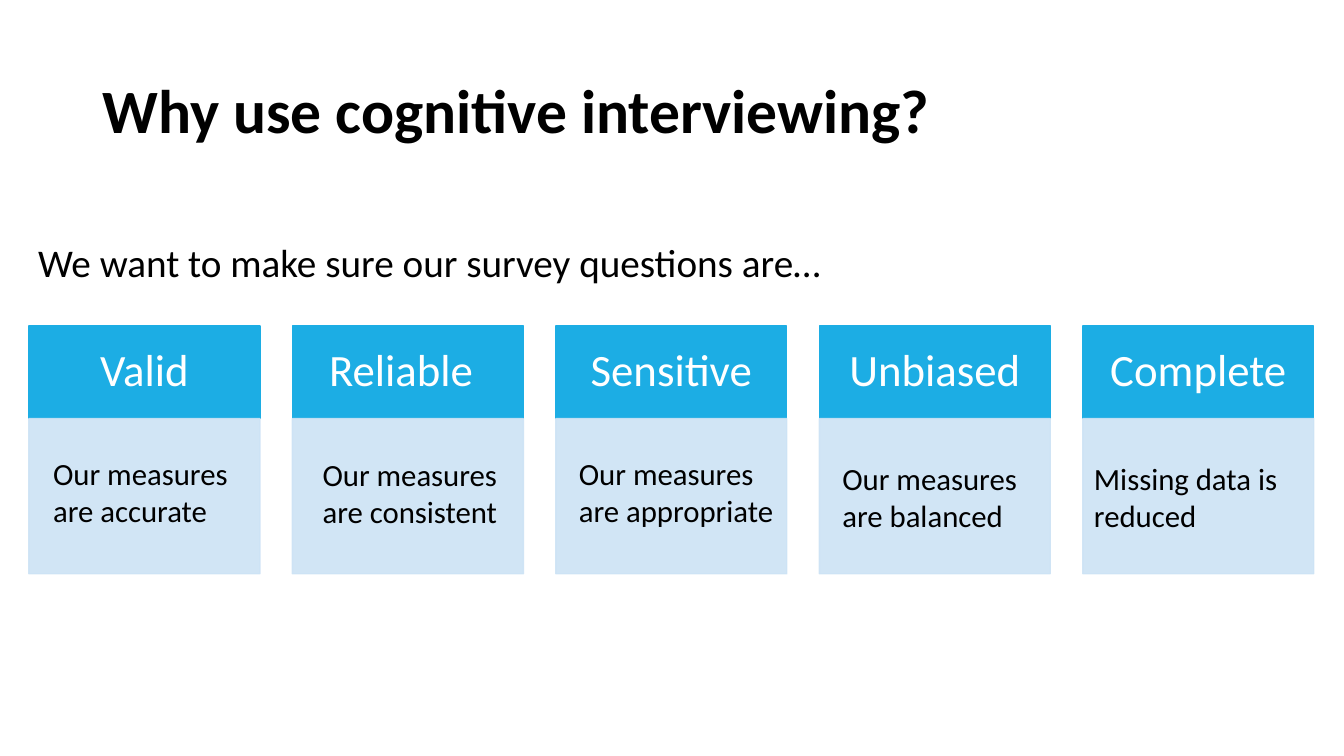
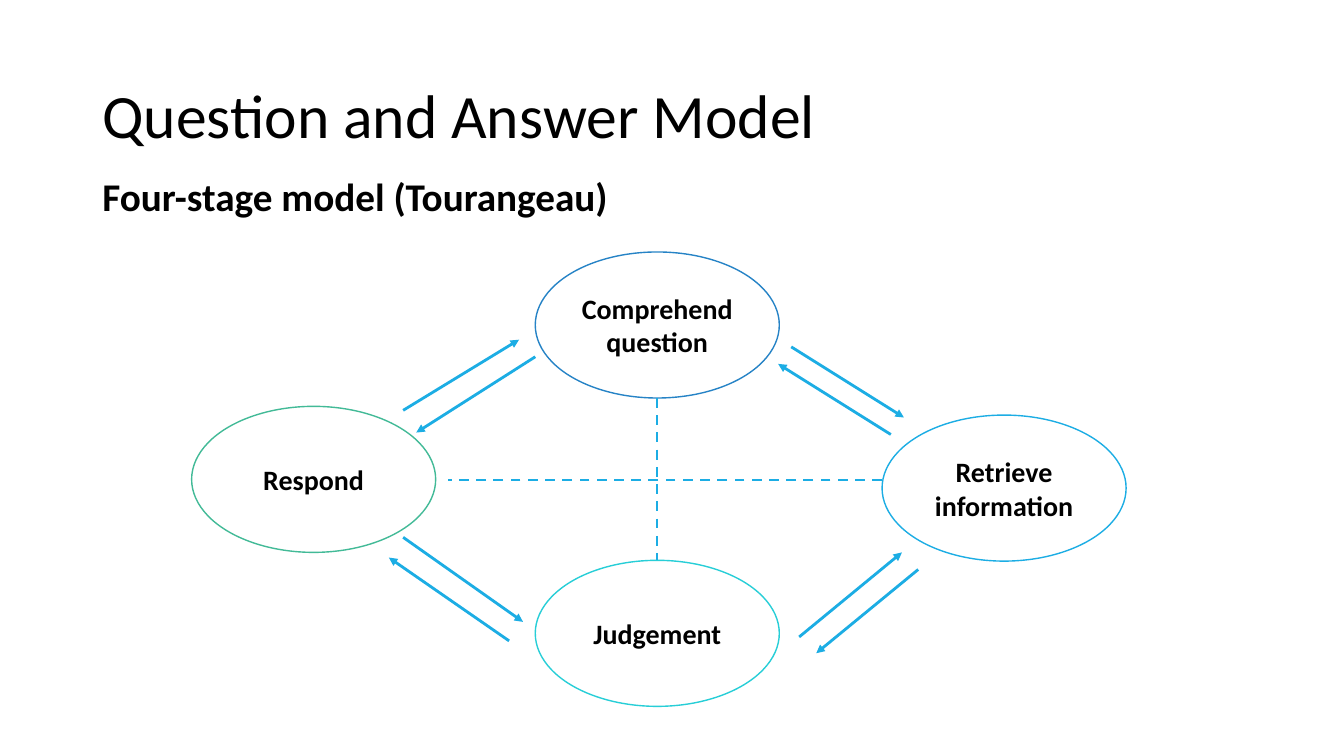
from dataclasses import dataclass

import pptx
import pptx.dml.color
import pptx.enum.dml
import pptx.enum.shapes
import pptx.enum.text
import pptx.oxml
import pptx.oxml.ns
import pptx.util
from lxml import etree

Cm = pptx.util.Cm
Pt = pptx.util.Pt
qn = pptx.oxml.ns.qn
rgb = pptx.dml.color.RGBColor.from_string
SHAPE = pptx.enum.shapes.MSO_SHAPE
ALIGN = pptx.enum.text.PP_ALIGN
ANCHOR = pptx.enum.text.MSO_ANCHOR


@dataclass(frozen=True)
class Theme:
    font: str = "Calibri"
    text: str = "000000"
    white: str = "FFFFFF"
    accent: str = "1CADE4"
    panel: str = "CDE3F5"
    blue: str = "2683C6"
    green: str = "42BA97"
    teal: str = "27CED7"
    title: int = 44
    header: int = 32
    lead: int = 28
    body: int = 22
    label: int = 20


theme = Theme()


def write(s, text, size, color=theme.text, bold=False, align=ALIGN.LEFT, spacing=1.0):
    tf = s.text_frame
    tf.word_wrap = True
    tf.auto_size = pptx.enum.text.MSO_AUTO_SIZE.NONE
    p = tf.paragraphs[0]
    p.alignment = align
    p.line_spacing = spacing
    r = p.add_run()
    r.text = text
    r.font.name = theme.font
    r.font.size = Pt(size)
    r.font.bold = bold
    r.font.color.rgb = rgb(color)
    return tf


def add_box(sp, kind, left, top, width, height, fill, line):
    s = sp.add_shape(kind, Cm(left), Cm(top), Cm(width), Cm(height))
    s.shadow.inherit = False
    s.fill.solid()
    s.fill.fore_color.rgb = rgb(fill)
    s.line.color.rgb = rgb(line)
    s.line.width = Pt(1)
    return s


prs = pptx.Presentation()
prs.slide_width = Cm(33.87)
prs.slide_height = Cm(19.05)

titles = [
    ("Why use cognitive interviewing?", 1.02, True),
    ("Question and Answer Model", 1.14, False),
]
for text, top, bold in titles:
    title = prs.slides.add_slide(prs.slide_layouts[5]).shapes.title
    title.left, title.top, title.width, title.height = Cm(2.33), Cm(top), Cm(29.21), Cm(3.68)
    tf = write(title, text, theme.title, bold=bold, spacing=0.9)
    tf.vertical_anchor = ANCHOR.MIDDLE

sp = prs.slides[0].shapes
lead = sp.add_textbox(Cm(0.71), Cm(5.87), Cm(31.62), Cm(1.45))
write(lead, "We want to make sure our survey questions are…", theme.lead)

qualities = [
    ("Valid", 0.51, "Our measures are accurate", 0.61, 0.91),
    ("Reliable", 0.85, "Our measures are consistent", 0.76, 0.94),
    ("Sensitive", 0.51, "Our measures are appropriate", 0.58, 0.91),
    ("Unbiased", 0.51, "Our measures are balanced", 0.58, 1.04),
    ("Complete", 0.51, "Missing data is reduced", 0.28, 1.04),
]
column_left, column_pitch, column_width = 0.73, 6.64, 5.82
header_top, header_height, panel_height = 8.22, 2.33, 3.91
for i, (name, header_right, meaning, indent, drop) in enumerate(qualities):
    left = column_left + i * column_pitch
    header = add_box(sp, SHAPE.RECTANGLE, left, header_top, column_width, header_height,
                     theme.accent, theme.accent)
    tf = write(header, name, theme.header, theme.white, align=ALIGN.CENTER, spacing=0.9)
    tf.margin_left, tf.margin_right = Cm(0.51), Cm(header_right)

    panel = add_box(sp, SHAPE.RECTANGLE, left, header_top + header_height, column_width,
                    panel_height, theme.panel, theme.panel)
    for color in panel._element.spPr.iter(qn("a:srgbClr")):
        etree.SubElement(color, qn("a:alpha")).set("val", "90000")
    tf = write(panel, meaning, theme.body)
    tf.vertical_anchor = ANCHOR.TOP
    tf.margin_left, tf.margin_top, tf.margin_right = Cm(indent), Cm(drop), Cm(0.2)

sp = prs.slides[1].shapes
subtitle = sp.add_textbox(Cm(2.33), Cm(4.34), Cm(29.21), Cm(1.5))
write(subtitle, "Four-stage model (Tourangeau)", theme.lead, bold=True, spacing=0.9)

stages = [
    ("Comprehend question", 13.49, 6.35, theme.blue),
    ("Respond", 4.83, 10.24, theme.green),
    ("Retrieve information", 22.23, 10.46, theme.accent),
    ("Judgement", 13.49, 14.12, theme.teal),
]
for name, left, top, outline in stages:
    stage = add_box(sp, SHAPE.OVAL, left, top, 6.15, 3.68, theme.white, outline)
    write(stage, name, theme.label, bold=True, align=ALIGN.CENTER)

arrows = [
    (22.45, 10.95, 19.61, 9.17),
    (20.14, 16.05, 22.73, 13.92),
    (13.49, 8.99, 10.49, 10.9),
    (10.16, 13.54, 13.18, 15.67),
    (10.16, 10.34, 13.08, 8.56),
    (12.83, 16.15, 9.8, 14.05),
    (23.14, 14.35, 20.57, 16.46),
    (19.94, 8.74, 22.78, 10.52),
]
dashes = [
    (16.56, 10.03, 16.56, 14.12),
    (22.23, 12.09, 11.28, 12.09),
]
for ends in arrows + dashes:
    link = sp.add_connector(pptx.enum.shapes.MSO_CONNECTOR.STRAIGHT, *map(Cm, ends))
    link.line.color.rgb = rgb(theme.accent)
    if ends in arrows:
        link.line.width = Pt(2)
        etree.SubElement(link.line._get_or_add_ln(), qn("a:tailEnd")).set("type", "triangle")
    else:
        link.line.width = Pt(1.75)
        link.line.dash_style = pptx.enum.dml.MSO_LINE.DASH
    etree.SubElement(link._element.spPr, qn("a:effectLst"))

prs.save("out.pptx")
